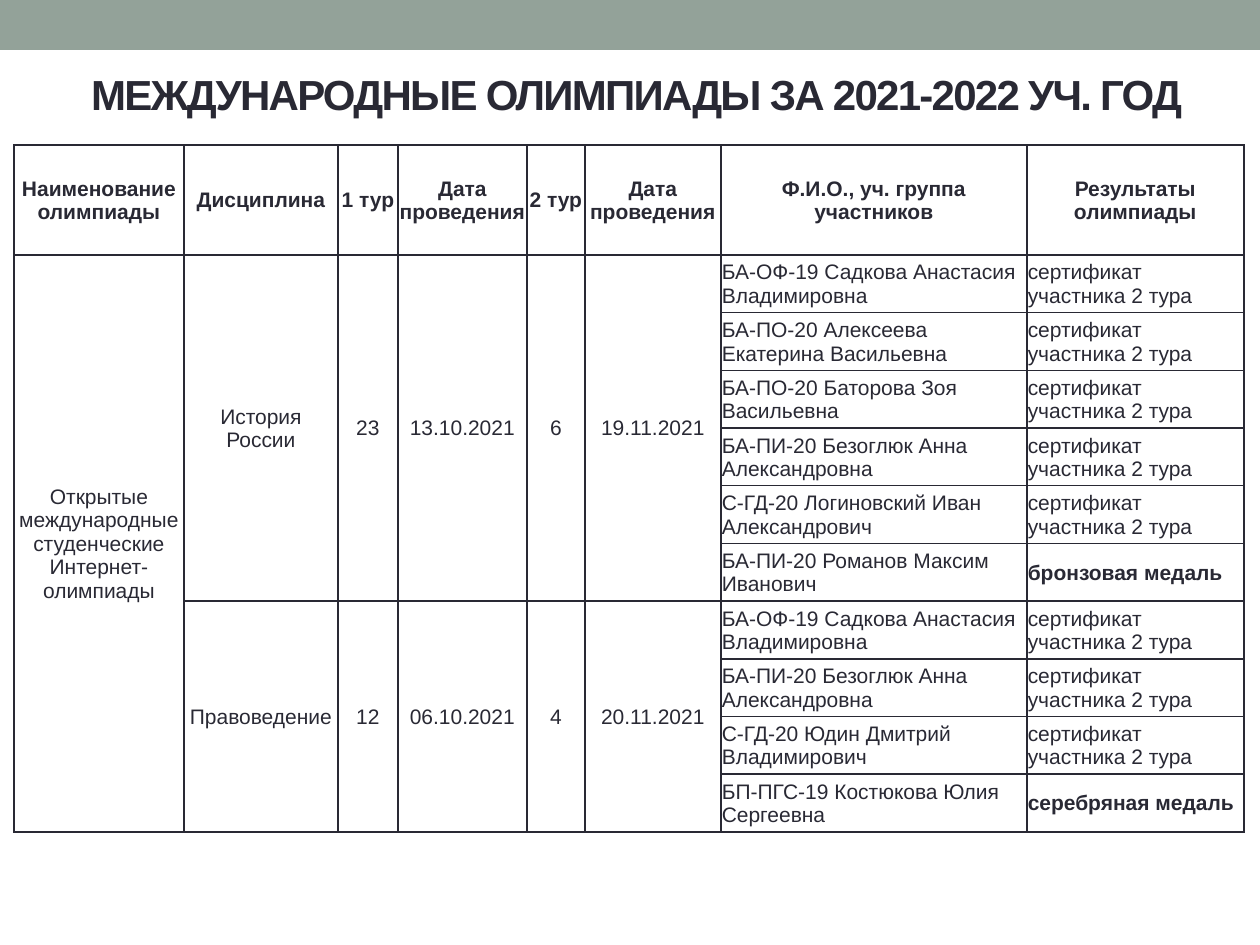
from lxml import etree
from pptx import Presentation
from pptx.dml.color import RGBColor
from pptx.enum.shapes import MSO_SHAPE
from pptx.enum.text import MSO_ANCHOR, MSO_AUTO_SIZE, PP_ALIGN
from pptx.oxml import parse_xml
from pptx.oxml.ns import nsdecls
from pptx.util import Emu, Pt

INK = RGBColor(0x29, 0x29, 0x34)
SAGE = RGBColor(0x93, 0xA2, 0x99)
CENTER, LEFT = PP_ALIGN.CENTER, PP_ALIGN.LEFT

# Table content
HEADS = ["Наименование олимпиады", "Дисциплина", "1 тур", "Дата проведения",
         "2 тур", "Дата проведения", "Ф.И.О., уч. группа участников",
         "Результаты олимпиады"]
EVENT = "Открытые международные студенческие Интернет-олимпиады"
CERT = "сертификат участника 2 тура"
# Each subject: its facts, its people, the medal of the last one
GROUPS = [
    (["История России", "23", "13.10.2021", "6", "19.11.2021"],
     ["БА-ОФ-19 Садкова Анастасия Владимировна",
      "БА-ПО-20 Алексеева Екатерина Васильевна",
      "БА-ПО-20 Баторова Зоя Васильевна",
      "БА-ПИ-20 Безоглюк Анна Александровна",
      "С-ГД-20 Логиновский Иван Александрович",
      "БА-ПИ-20 Романов Максим Иванович"],
     "бронзовая медаль"),
    (["Правоведение", "12", "06.10.2021", "4", "20.11.2021"],
     ["БА-ОФ-19 Садкова Анастасия Владимировна",
      "БА-ПИ-20 Безоглюк Анна Александровна",
      "С-ГД-20 Юдин Дмитрий Владимирович",
      "БП-ПГС-19 Костюкова Юлия Сергеевна"],
     "серебряная медаль"),
]
COLS = [170, 154, 60, 129, 58, 136, 306, 217]
HEAD, BODY = 110, 577


def px(n):
    return Emu(round(n * 914400 / 126))


class Deck:
    font = "Arial"

    def __init__(self, wide, high):
        self.prs = Presentation()
        self.prs.slide_width, self.prs.slide_height = px(wide), px(high)
        self.slide = self.prs.slides.add_slide(self.prs.slide_layouts[5])

    def style(self, frame, size, bold, align):
        for par in frame.paragraphs:
            par.alignment = align
            for run in par.runs:
                font = run.font
                font.name, font.size, font.bold = self.font, Pt(size), bold
                font.color.rgb = INK

    def band(self, x, y, w, h, color):
        box = self.slide.shapes.add_shape(
            MSO_SHAPE.RECTANGLE, px(x), px(y), px(w), px(h))
        box.shadow.inherit = False
        box.fill.solid()
        box.fill.fore_color.rgb = color
        box.line.fill.background()

    def title(self, text, x, y, w, h):
        box = self.slide.shapes.title
        box.left, box.top, box.width, box.height = px(x), px(y), px(w), px(h)
        frame = box.text_frame
        frame.text = text
        frame.auto_size = MSO_AUTO_SIZE.NONE
        frame.vertical_anchor = MSO_ANCHOR.MIDDLE
        self.style(frame, 24, True, CENTER)
        for run in frame.paragraphs[0].runs:
            run.font._element.set("spc", "-100")

    def table(self, x, y, cols, rows):
        grid = self.slide.shapes.add_table(
            len(rows), len(cols), px(x), px(y),
            px(sum(cols)), px(sum(rows))).table
        grid.first_row = grid.horz_banding = False
        for col, w in zip(grid.columns, cols):
            col.width = px(w)
        for row, h in zip(grid.rows, rows):
            row.height = px(h)
        for cell in grid.iter_cells():
            cell.fill.background()
            self.edge(cell)
        return grid

    def edge(self, cell):
        props = cell._tc.get_or_add_tcPr()
        for i, side in enumerate("LRTB"):
            line = parse_xml(f'<a:ln{side} {nsdecls("a")} w="{Pt(1)}"/>')
            fill = etree.SubElement(line, line.tag[:-3] + "solidFill")
            etree.SubElement(fill, line.tag[:-3] + "srgbClr", val=str(INK))
            props.insert(i, line)

    def cell(self, grid, row, col, text, bold=False, align=CENTER, span=1):
        cell = grid.cell(row, col)
        if span > 1:
            cell.merge(grid.cell(row + span - 1, col))
        cell.text_frame.text = text
        cell.vertical_anchor = MSO_ANCHOR.MIDDLE
        cell.margin_left = cell.margin_right = cell.margin_top = px(1)
        cell.margin_bottom = 0
        self.style(cell.text_frame, 12, bold, align)


def main():
    deck = Deck(1260, 945)

    # Top band and title
    deck.band(0, 0, 1260, 50, SAGE)
    deck.title("МЕЖДУНАРОДНЫЕ ОЛИМПИАДЫ ЗА 2021-2022 УЧ. ГОД",
               14, 54, 1245, 80)

    # Table with its header row
    count = sum(len(people) for _, people, _ in GROUPS)
    grid = deck.table(14, 145, COLS, [HEAD] + [BODY / count] * count)
    for col, text in enumerate(HEADS):
        deck.cell(grid, 0, col, text, bold=True)
    deck.cell(grid, 1, 0, EVENT, span=count)

    # Subjects, people and results
    row = 1
    for facts, people, medal in GROUPS:
        for col, text in enumerate(facts, 1):
            deck.cell(grid, row, col, text, span=len(people))
        for name in people:
            won = name == people[-1]
            deck.cell(grid, row, 6, name, align=LEFT)
            deck.cell(grid, row, 7, medal if won else CERT, won, LEFT)
            row += 1

    deck.prs.save("out.pptx")


if __name__ == "__main__":
    main()
